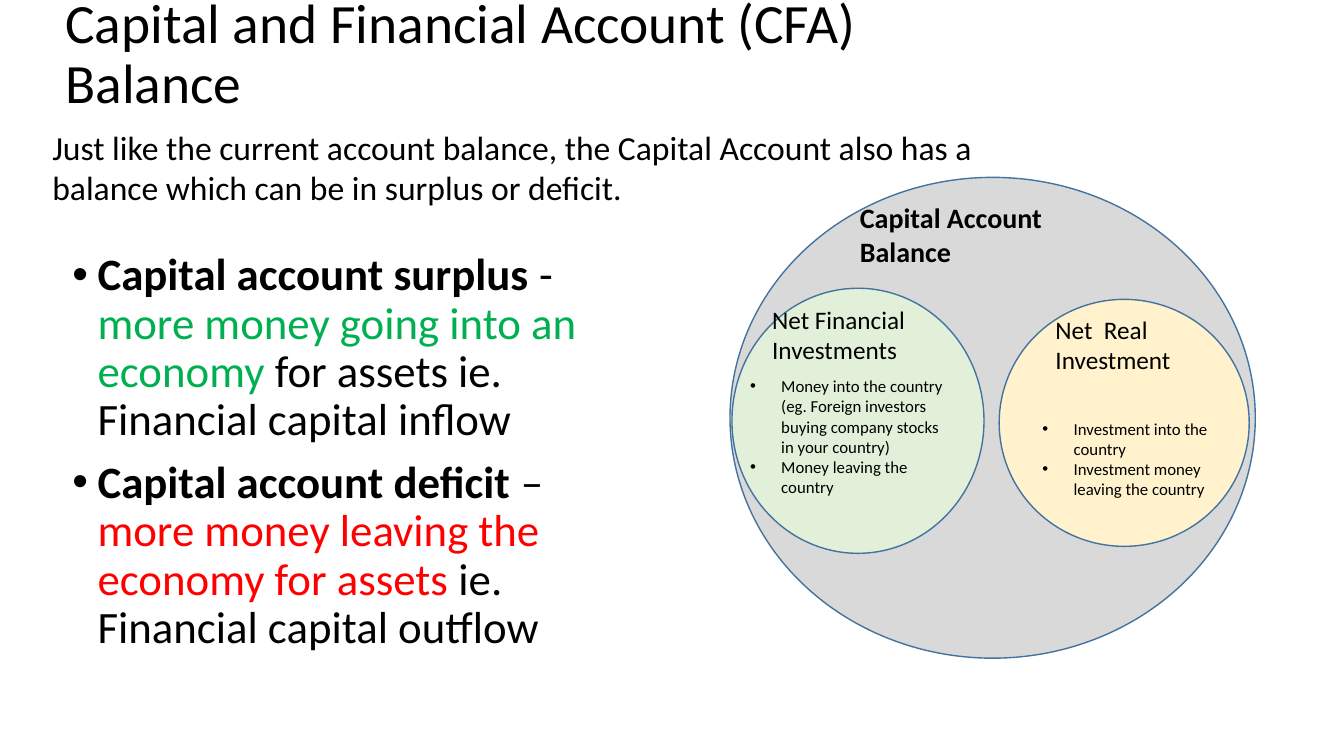
"""Build the slide on the balance of the capital and financial account."""
import dataclasses

import lxml.etree
import pptx
import pptx.dml.color
import pptx.enum.shapes
import pptx.enum.text
import pptx.oxml.ns
import pptx.util

Inches = pptx.util.Inches


@dataclasses.dataclass(frozen=True)
class Theme:
    """Colours, font and type sizes of the slide."""
    font: str = "Calibri"
    ink: str = "000000"
    gain: str = "00B050"
    loss: str = "FF0000"
    edge: str = "43739E"
    whole: str = "D9D9D9"
    money: str = "E2F0D9"
    real: str = "FFF2CC"
    title: float = 39.6
    body: float = 32
    lead: float = 24
    head: float = 20
    label: float = 18
    note: float = 12


class Board:
    """Draw elements on one slide in one style."""

    def __init__(self, slide, theme):
        """Keep the slide and the theme."""
        self.slide = slide
        self.theme = theme

    def color(self, code):
        """Return the colour for a hex code."""
        return pptx.dml.color.RGBColor.from_string(code)

    def oval(self, box, fill):
        """Add an outlined ellipse."""
        kind = pptx.enum.shapes.MSO_SHAPE.OVAL
        shape = self.slide.shapes.add_shape(kind, *map(Inches, box))
        shape.shadow.inherit = False
        shape.fill.solid()
        shape.fill.fore_color.rgb = self.color(fill)
        shape.line.color.rgb = self.color(self.theme.edge)
        shape.line.width = pptx.util.Pt(1)

    def bullet(self, para, indent):
        """Give a paragraph a round bullet and a hanging indent."""
        props = para._p.get_or_add_pPr()
        props.set("marL", str(Inches(indent)))
        props.set("indent", str(-Inches(indent)))
        for tag, key, value in (("a:buFont", "typeface", "Arial"),
                                ("a:buChar", "char", "•")):
            item = lxml.etree.SubElement(props, pptx.oxml.ns.qn(tag))
            item.set(key, value)

    def text(self, box, paras, size, bold=None, indent=0, line=None,
             before=0, middle=False):
        """Add a text box; each paragraph is a string or (text, colour, bold) runs."""
        frame = self.slide.shapes.add_textbox(*map(Inches, box)).text_frame
        frame.word_wrap = True
        if middle:
            frame.vertical_anchor = pptx.enum.text.MSO_ANCHOR.MIDDLE
        for index, runs in enumerate(paras):
            para = frame.add_paragraph() if index else frame.paragraphs[0]
            para.line_spacing = line
            para.space_before = pptx.util.Pt(before)
            if indent:
                self.bullet(para, indent)
            para.font.name = self.theme.font
            para.font.size = pptx.util.Pt(size)
            para.font.bold = bold
            para.font.color.rgb = self.color(self.theme.ink)
            if isinstance(runs, str):
                runs = [(runs, self.theme.ink, bold)]
            for words, shade, strong in runs:
                run = para.add_run()
                run.text = words
                run.font.name = self.theme.font
                run.font.size = pptx.util.Pt(size)
                run.font.bold = strong
                run.font.color.rgb = self.color(shade)


def main():
    """Build and save the slide."""
    deck = pptx.Presentation()
    deck.slide_width, deck.slide_height = Inches(13.33), Inches(7.5)
    theme = Theme()
    board = Board(deck.slides.add_slide(deck.slide_layouts[6]), theme)

    board.text((0.55, 0.19, 9.5, 0.73),
               ["Capital and Financial Account (CFA) Balance"],
               theme.title, line=0.9, middle=True)
    surplus = [("Capital account surplus ", theme.ink, True),
               ("- ", theme.ink, False),
               ("more money going into an economy", theme.gain, False),
               (" for assets ie. Financial capital inflow", theme.ink, False)]
    deficit = [("Capital account deficit ", theme.ink, True),
               ("– ", theme.ink, False),
               ("more money leaving the economy for assets ", theme.loss, False),
               ("ie. Financial capital outflow", theme.ink, False)]
    board.text((0.62, 2.45, 5.83, 4.71), [surplus, deficit], theme.body,
               indent=0.25, line=0.9, before=10)
    board.text((0.42, 1.21, 9.55, 0.91),
               ["Just like the current account balance, the Capital Account also "
                "has a balance which can be in surplus or deficit."], theme.lead)

    board.oval((7.24, 1.76, 5.21, 4.77), theme.whole)
    board.text((8.43, 1.94, 2.71, 0.77), ["Capital Account Balance"],
               theme.head, bold=True)

    parts = [
        ((7.26, 2.86, 2.5, 2.63), theme.money,
         (7.56, 2.97, 1.53, 0.71), "Net Financial Investments",
         (7.34, 3.68, 2.11, 1.51),
         ["Money into the country (eg. Foreign investors buying company "
          "stocks in your country)", "Money leaving the country"]),
        ((9.91, 2.97, 2.48, 2.45), theme.real,
         (10.37, 3.07, 1.55, 0.71), "Net  Real Investment",
         (10.24, 4.1, 2.11, 0.91),
         ["Investment into the country",
          "Investment money leaving the country"]),
    ]
    for ring, fill, top, label, low, notes in parts:
        board.oval(ring, fill)
        board.text(top, [label], theme.label)
        board.text(low, notes, theme.note, indent=0.31)

    deck.save("out.pptx")


if __name__ == "__main__":
    main()
